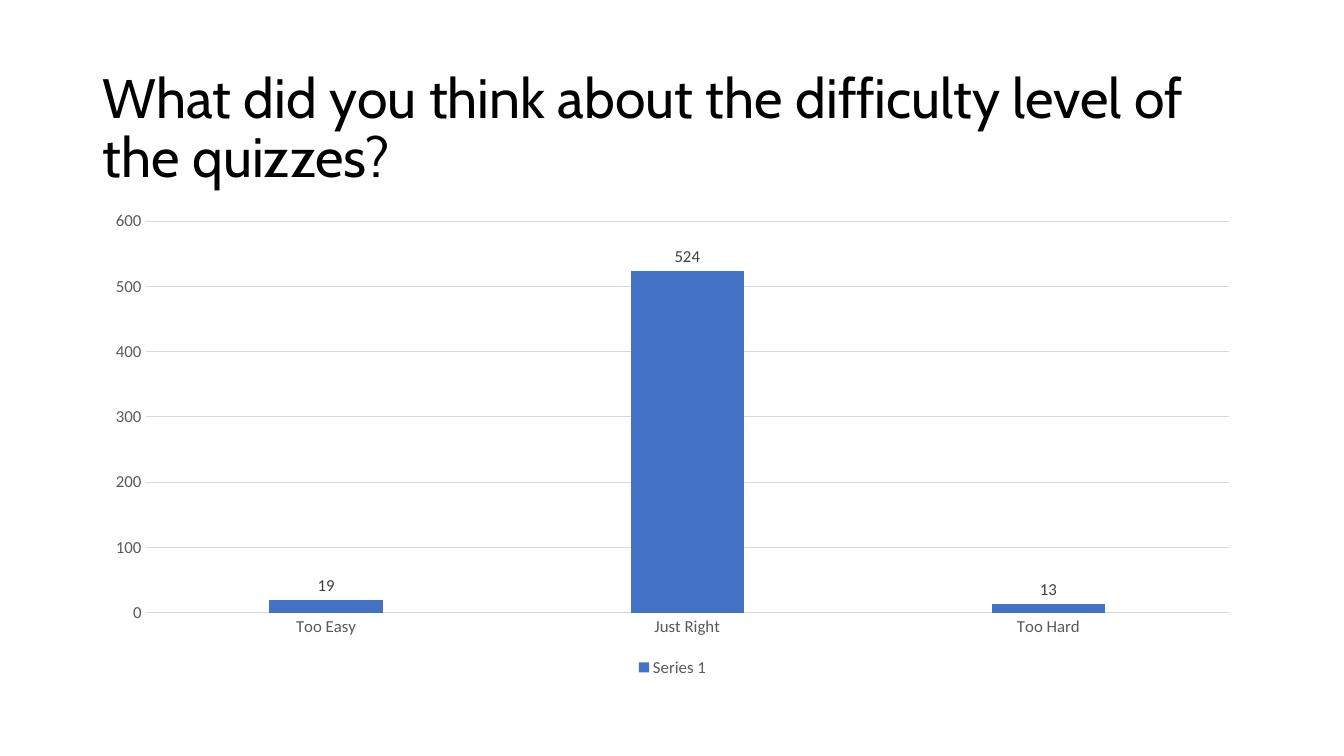
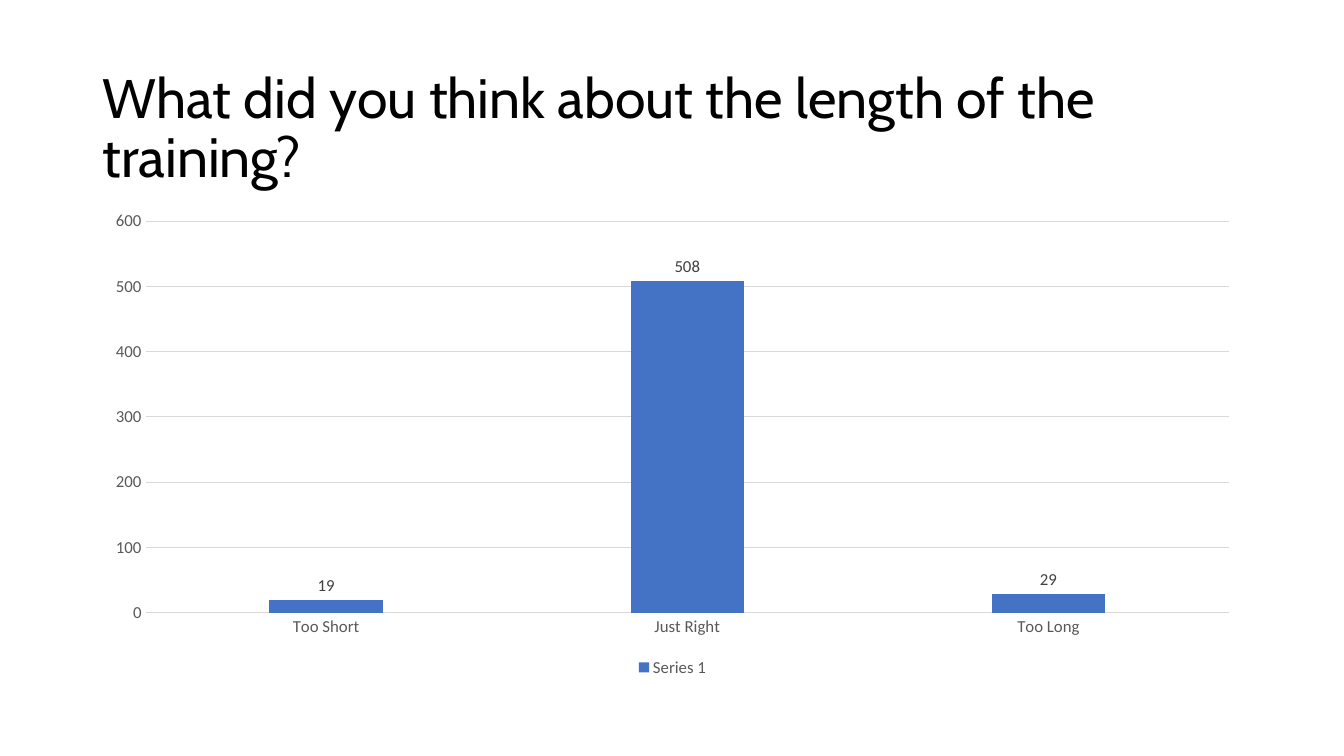
import pptx
import pptx.util
import pptx.chart.data
import pptx.dml.color
import pptx.enum.chart
import pptx.enum.text

Inches, Pt = pptx.util.Inches, pptx.util.Pt
enums = pptx.enum.chart

POLLS = [
    ("What did you think about the difficulty level of the quizzes?",
     {"Too Easy": 19, "Just Right": 524, "Too Hard": 13}),
    ("What did you think about the length of the training?",
     {"Too Short": 19, "Just Right": 508, "Too Long": 29}),
]
SERIES = "Series 1"


class Theme:
    head, body = "Cabin", "Calibri"
    title, label, rule = Pt(39.6), Pt(12), Pt(0.75)
    ink, value, axis = "000000", "404040", "595959"
    grid, bar, back = "D9D9D9", "4472C4", "FFFFFF"


LEFT, WIDTH = Inches(0.92), Inches(11.5)


def rgb(code):
    return pptx.dml.color.RGBColor.from_string(code)


def style(font, name, size, color):
    font.name, font.size = name, size
    font.color.rgb = rgb(color)


def draw(line):
    line.color.rgb = rgb(Theme.grid)
    line.width = Theme.rule


def add_title(slide, text):
    box = slide.shapes.add_textbox(LEFT, Inches(0.74), WIDTH, Inches(1.1))
    frame = box.text_frame
    frame.word_wrap = True
    frame.vertical_anchor = pptx.enum.text.MSO_ANCHOR.MIDDLE
    frame.text = text
    para = frame.paragraphs[0]
    para.line_spacing = 0.9
    style(para.runs[0].font, Theme.head, Theme.title, Theme.ink)


def add_bars(slide, votes):
    data = pptx.chart.data.CategoryChartData()
    data.categories = list(votes)
    data.add_series(SERIES, list(votes.values()))
    chart = slide.shapes.add_chart(
        enums.XL_CHART_TYPE.COLUMN_CLUSTERED,
        LEFT, Inches(2), WIDTH, Inches(4.76), data).chart
    style(chart.font, Theme.body, Pt(10), Theme.ink)
    chart.has_title = False

    chart.has_legend = True
    chart.legend.position = enums.XL_LEGEND_POSITION.BOTTOM
    chart.legend.include_in_layout = False
    style(chart.legend.font, Theme.body, Theme.label, Theme.axis)

    for axis in (chart.category_axis, chart.value_axis):
        axis.major_tick_mark = axis.minor_tick_mark = enums.XL_TICK_MARK.NONE
        style(axis.tick_labels.font, Theme.body, Theme.label, Theme.axis)
    draw(chart.category_axis.format.line)
    chart.value_axis.format.line.fill.background()
    draw(chart.value_axis.major_gridlines.format.line)

    plot = chart.plots[0]
    plot.gap_width, plot.overlap = 219, -27
    plot.vary_by_categories = False
    bars = plot.series[0]
    bars.format.fill.solid()
    bars.format.fill.fore_color.rgb = rgb(Theme.bar)
    labels = bars.data_labels
    labels.show_value = True
    labels.position = enums.XL_LABEL_POSITION.OUTSIDE_END
    style(labels.font, Theme.body, Theme.label, Theme.value)


def main():
    deck = pptx.Presentation()
    deck.slide_width, deck.slide_height = Inches(13.33), Inches(7.5)
    fill = deck.slide_master.background.fill
    fill.solid()
    fill.fore_color.rgb = rgb(Theme.back)
    for title, votes in POLLS:
        slide = deck.slides.add_slide(deck.slide_layouts[6])
        add_title(slide, title)
        add_bars(slide, votes)
    deck.save("out.pptx")


if __name__ == "__main__":
    main()
